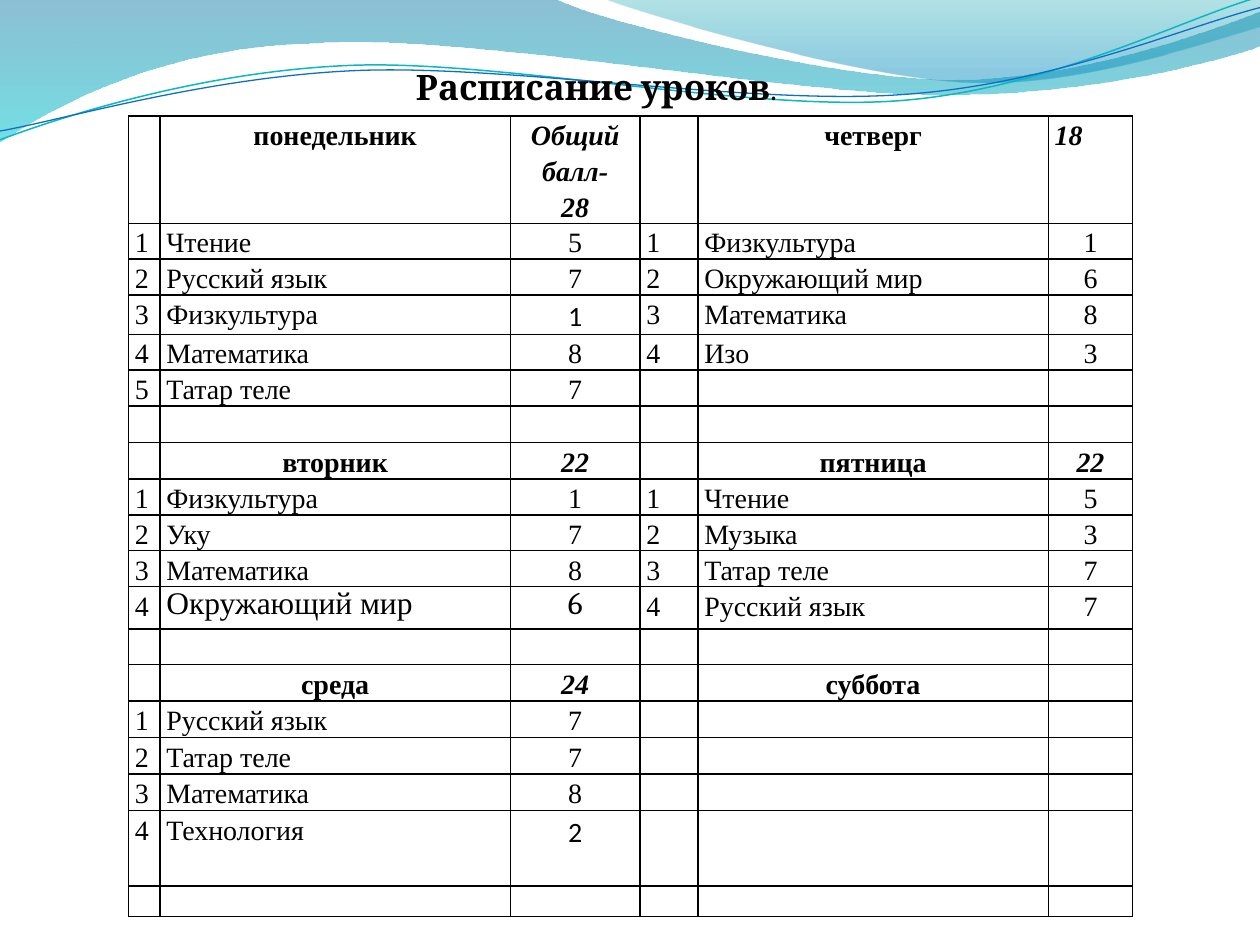
from dataclasses import dataclass
from math import cos, radians, sin

from lxml.etree import SubElement
from pptx import Presentation
from pptx.dml.color import RGBColor as RGB
from pptx.enum.text import MSO_ANCHOR, MSO_AUTO_SIZE, PP_ALIGN as ALIGN
from pptx.oxml import parse_xml
from pptx.oxml.ns import nsdecls, qn
from pptx.util import Emu, Pt


@dataclass(frozen=True)
class Theme:
    ink: str = "000000"
    body_font: str = "Times New Roman"
    title_font: str = "Cambria"
    digit_font: str = "Calibri"
    title_size: float = 20
    large_size: float = 18
    body_size: float = 16
    empty_size: float = 10
    spacing: float = 1.15
    border: float = 1


@dataclass(frozen=True)
class Stop:
    color: str
    position: float
    opacity: int


@dataclass(frozen=True)
class Wave:
    """Start point, then segments: 2 numbers for a line, 6 for a Bézier curve."""
    box: tuple[float, float, float, float]
    start: tuple[float, float]
    segments: tuple[tuple[float, ...], ...]
    stops: tuple[Stop, ...] = ()
    line: str = ""
    weight: float = 0
    tilt: float = 0


@dataclass(frozen=True)
class Day:
    row: int
    col: int
    name: str
    total: str
    lessons: tuple[tuple[str, str], ...]


@dataclass(frozen=True)
class Style:
    font: str = Theme.body_font
    size: float = Theme.body_size
    bold: bool = False
    italic: bool = False
    align: ALIGN = ALIGN.LEFT
    spacing: float = Theme.spacing


THEME = Theme()
GRID = 10  # grid columns across the slide
COLS = (0.25, 2.78, 1.03, 0.46, 2.78, 0.67)
ROWS = (0.85, 0.27, 0.27, 0.29, 0.27, 0.27, 0.29, 0.29, 0.27, 0.27,
        0.27, 0.34, 0.28, 0.29, 0.29, 0.29, 0.29, 0.6, 0.24)

WAVES = (
    Wave((-0.01, -0.01, 10.02, 1.14), (0, 0),
         ((4.4, -0.01), (4.76, 0.17, 6.64, 0.63, 7.58, 0.63),
          (8.53, 0.63, 9.58, 0.26, 10, 0.09), (10.01, 0.36),
          (9.83, 0.44, 8.7, 0.76, 7.46, 0.75),
          (6.22, 0.75, 3.82, 0.28, 2.57, 0.34),
          (1.29, 0.36, 0.46, 0.83, -0.01, 1.13), (0, 0)),
         stops=(Stop("0074A1", 0, 45), Stop("00C6CF", 1, 55))),
    Wave((4.79, -0.01, 5.21, 0.7), (4.79, -0.01),
         ((5.09, 0.11, 6.82, 0.62, 7.69, 0.65),
          (8.56, 0.69, 9.61, 0.32, 10, 0.21), (10, 0), (4.79, -0.01)),
         stops=(Stop("00A1A9", 0, 30), Stop("008BBF", 0.8, 45))),
    Wave((-0.02, 0.22, 10.02, 0.71), (0, 1.11),
         ((0.48, 0.93, 1.58, 0.57, 2.77, 0.52),
          (3.95, 0.47, 5.93, 0.89, 7.13, 0.8),
          (8.33, 0.71, 9.38, 0.15, 9.98, -0.02)),
         line="0AB8BF", weight=0.85, tilt=-2.7),
    Wave((-0.02, 0.3, 10.03, 0.58), (0, 1.04),
         ((0.47, 0.96, 1.64, 0.61, 2.83, 0.56),
          (4.03, 0.51, 5.97, 0.84, 7.17, 0.75),
          (8.36, 0.67, 9.41, 0.21, 10, 0.06)),
         line="0F6FC6", weight=0.75, tilt=-2.7),
)

DAYS = (
    Day(0, 0, "понедельник", "Общий балл-\n28",
        (("Чтение", "5"), ("Русский язык", "7"), ("Физкультура", "1"),
         ("Математика", "8"), ("Татар теле", "7"))),
    Day(0, 3, "четверг", "18",
        (("Физкультура", "1"), ("Окружающий мир", "6"), ("Математика", "8"), ("Изо", "3"))),
    Day(7, 0, "вторник", "22",
        (("Физкультура", "1"), ("Уку", "7"), ("Математика", "8"), ("Окружающий мир", "6"))),
    Day(7, 3, "пятница", "22",
        (("Чтение", "5"), ("Музыка", "3"), ("Татар теле", "7"), ("Русский язык", "7"))),
    Day(13, 0, "среда", "24",
        (("Русский язык", "7"), ("Татар теле", "7"), ("Математика", "8"), ("Технология", "2"))),
    Day(13, 3, "суббота", "", ()),
)

PLAIN = Style()
SCORE = Style(align=ALIGN.CENTER)
DAY_NAME = Style(bold=True, align=ALIGN.CENTER)
TOTAL = Style(bold=True, italic=True, align=ALIGN.CENTER)
DIGIT = Style(font=THEME.digit_font, align=ALIGN.CENTER)
# Cells that differ from the style of their column
SPECIAL = {
    (0, 5): Style(bold=True, italic=True),
    (3, 2): DIGIT,
    (17, 2): DIGIT,
    (11, 1): Style(size=THEME.large_size, spacing=1),
    (11, 2): Style(THEME.title_font, THEME.large_size, align=ALIGN.CENTER, spacing=1),
}


def trace(path, wave: Wave, unit: float) -> None:
    """Write the wave's lines and curves into the path, in the box's own frame."""
    left, top, width, height = wave.box
    mid_x, mid_y, turn = left + width / 2, top + height / 2, radians(-wave.tilt)

    def add(tag: str, numbers: tuple[float, ...]) -> None:
        command = SubElement(path, qn(f"a:{tag}"))
        for x, y in zip(numbers[::2], numbers[1::2]):
            dx, dy = x - mid_x, y - mid_y
            local_x = dx * cos(turn) - dy * sin(turn) + width / 2
            local_y = dx * sin(turn) + dy * cos(turn) + height / 2
            pt = SubElement(command, qn("a:pt"))
            pt.set("x", str(round(local_x * unit)))
            pt.set("y", str(round(local_y * unit)))

    add("moveTo", wave.start)
    for seg in wave.segments:
        add("lnTo" if len(seg) == 2 else "cubicBezTo", seg)
    if wave.stops:
        SubElement(path, qn("a:close"))


def draw_wave(slide, wave: Wave, unit: float) -> None:
    left, top, width, height = (round(v * unit) for v in wave.box)
    builder = slide.shapes.build_freeform(left, top)
    builder.add_line_segments([(left + width, top + height)], close=False)
    sp = builder.convert_to_shape()
    path = next(sp._element.iter(qn("a:path")))
    for child in list(path):
        path.remove(child)
    trace(path, wave, unit)
    sp.rotation = wave.tilt
    sp.shadow.inherit = False
    if not wave.stops:
        sp.fill.background()
        sp.line.color.rgb = RGB.from_string(wave.line)
        sp.line.width = Pt(wave.weight)
        return
    sp.line.fill.background()
    sp.fill.gradient()
    sp.fill.gradient_angle = 270
    for grad, stop in zip(sp.fill.gradient_stops, wave.stops):
        grad.color.rgb = RGB.from_string(stop.color)
        grad.position = stop.position
    for clr, stop in zip(sp._element.spPr.iter(qn("a:srgbClr")), wave.stops):
        SubElement(clr, qn("a:alpha")).set("val", str(stop.opacity * 1000))


def format_run(r, font: str, size: float, bold: bool, italic: bool = False) -> None:
    r.font.name, r.font.size = font, Pt(size)
    r.font.bold, r.font.italic = bold, italic
    r.font.color.rgb = RGB.from_string(THEME.ink)


def format_empty_cell(cell, unit: float) -> None:
    cell.margin_left = cell.margin_right = Emu(round(0.05 * unit))
    cell.margin_top = cell.margin_bottom = 0
    cell.fill.background()
    tc_pr = cell._tc.get_or_add_tcPr()
    for i, side in enumerate("LRTB"):
        tc_pr.insert(i, parse_xml(
            f'<a:ln{side} {nsdecls("a")} w="{Pt(THEME.border)}"><a:solidFill>'
            f'<a:srgbClr val="{THEME.ink}"/></a:solidFill></a:ln{side}>'))
    end = cell.text_frame.paragraphs[0]._p.get_or_add_endParaRPr()
    end.set("sz", str(THEME.empty_size * 100))


def write_cell(table, row: int, col: int, text: str, style: Style) -> None:
    style = SPECIAL.get((row, col), style)
    tf = table.cell(row, col).text_frame
    tf.text = text
    for p in tf.paragraphs:
        p.alignment, p.line_spacing = style.align, style.spacing
        for r in p.runs:
            format_run(r, style.font, style.size, style.bold, style.italic)


def write_day(table, day: Day) -> None:
    write_cell(table, day.row, day.col + 1, day.name, DAY_NAME)
    if day.total:
        write_cell(table, day.row, day.col + 2, day.total, TOTAL)
    for n, (lesson, score) in enumerate(day.lessons, 1):
        for i, (text, style) in enumerate(((str(n), PLAIN), (lesson, PLAIN), (score, SCORE))):
            write_cell(table, day.row + n, day.col + i, text, style)


def draw_timetable(slide, unit: float) -> None:
    box = (round(v * unit) for v in (1.02, 0.92, sum(COLS), sum(ROWS)))
    table = slide.shapes.add_table(len(ROWS), len(COLS), *box).table
    table.first_row = table.horz_banding = False
    for column, width in zip(table.columns, COLS):
        column.width = Emu(round(width * unit))
    for row, height in zip(table.rows, ROWS):
        row.height = Emu(round(height * unit))
    for cell in table.iter_cells():
        format_empty_cell(cell, unit)
    for day in DAYS:
        write_day(table, day)


def draw_title(slide, unit: float) -> None:
    title = slide.shapes.title
    title.left, title.top, title.width, title.height = (
        Emu(round(v * unit)) for v in (3.2, 0.47, 3.59, 0.44))
    tf = title.text_frame
    tf.word_wrap, tf.auto_size = True, MSO_AUTO_SIZE.SHAPE_TO_FIT_TEXT
    tf.vertical_anchor = MSO_ANCHOR.TOP
    p = tf.paragraphs[0]
    p.alignment = ALIGN.LEFT
    for text, size, bold in (("Расписание уроков", THEME.title_size, True),
                             (".", THEME.large_size, False)):
        r = p.add_run()
        r.text = text
        format_run(r, THEME.title_font, size, bold)
    slide.shapes._spTree.append(title._element)  # in front of the waves


def main() -> None:
    prs = Presentation()
    prs.slide_width, prs.slide_height = Emu(9144000), Emu(6858000)
    unit = prs.slide_width / GRID
    slide = prs.slides.add_slide(prs.slide_layouts.get_by_name("Title Only"))
    for wave in WAVES:
        draw_wave(slide, wave, unit)
    draw_timetable(slide, unit)
    draw_title(slide, unit)
    prs.save("out.pptx")


if __name__ == "__main__":
    main()
